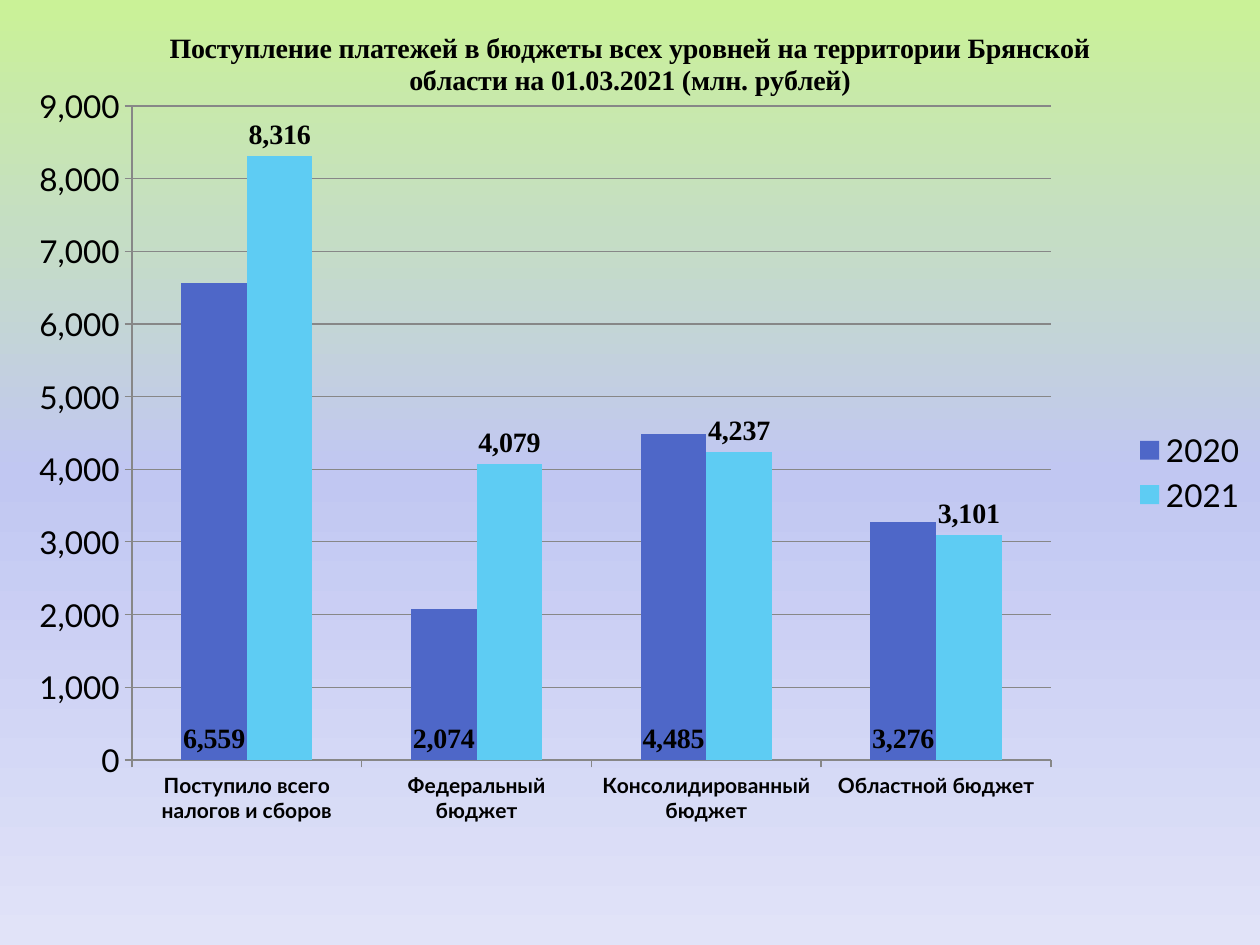
from lxml import etree
from pptx import Presentation
from pptx.chart.data import CategoryChartData
from pptx.dml.color import RGBColor
from pptx.enum import chart as kinds
from pptx.oxml import parse_xml
from pptx.oxml.ns import nsdecls, qn
from pptx.util import Emu, Pt

PX = 914400 // 126
WIDTH, HEIGHT = 1260, 945

THEME = {
    "text": "000000", "rule": "878787",
    "body": "Lato", "accent": "Times New Roman",
    "body_size": 18, "accent_size": 16, "category_size": 12,
    "backdrop": [(0, "CAF297"), (25, "C5DDC5"), (50, "C1C7F2"), (100, "E1E3F8")],
}
NUMBERS = "#,##0"
BUDGETS = ["Поступило всего налогов и сборов", "Федеральный бюджет",
           "Консолидированный бюджет", "Областной бюджет"]
YEARS = [
    ("2020", [6559, 2074, 4485, 3276], "4E67C8", kinds.XL_LABEL_POSITION.INSIDE_BASE),
    ("2021", [8316, 4079, 4237, 3101], "5ECCF3", kinds.XL_LABEL_POSITION.OUTSIDE_END),
]


def style_font(font, face, size, bold):
    for key, value in {"name": face, "size": Pt(size), "bold": bold}.items():
        setattr(font, key, value)
    font.color.rgb = RGBColor.from_string(THEME["text"])


def style_line(line):
    line.color.rgb = RGBColor.from_string(THEME["rule"])
    line.width = Pt(0.75)


deck = Presentation()
deck.slide_width, deck.slide_height = Emu(WIDTH * PX), Emu(HEIGHT * PX)
slide = deck.slides.add_slide(deck.slide_layouts[6])

# Chart over the full slide
receipts = CategoryChartData(number_format=NUMBERS)
receipts.categories = BUDGETS
for year, amounts, _, _ in YEARS:
    receipts.add_series(year, amounts)
chart = slide.shapes.add_chart(
    kinds.XL_CHART_TYPE.COLUMN_CLUSTERED, 0, 0,
    deck.slide_width, deck.slide_height, receipts).chart
style_font(chart.font, THEME["body"], THEME["body_size"], False)

# Title
chart.has_title = True
heading = chart.chart_title.text_frame.paragraphs[0].add_run()
heading.text = ("Поступление платежей в бюджеты всех уровней на территории "
                "Брянской области на 01.03.2021 (млн. рублей)")
style_font(heading.font, THEME["accent"], THEME["accent_size"], True)

# Legend
chart.has_legend = True
chart.legend.position = kinds.XL_LEGEND_POSITION.RIGHT
chart.legend.include_in_layout = False

# Axes
amount_axis, budget_axis = chart.value_axis, chart.category_axis
for key, value in {"minimum_scale": 0, "maximum_scale": 9000, "major_unit": 1000,
                   "has_major_gridlines": True}.items():
    setattr(amount_axis, key, value)
amount_axis.tick_labels.number_format = NUMBERS
amount_axis.tick_labels.number_format_is_linked = False
style_line(amount_axis.major_gridlines.format.line)
for axis in (amount_axis, budget_axis):
    axis.major_tick_mark = kinds.XL_TICK_MARK.OUTSIDE
    style_line(axis.format.line)
style_font(budget_axis.tick_labels.font, THEME["body"], THEME["category_size"], True)

# Columns and their labels
columns = chart.plots[0]
columns.vary_by_categories = False
columns.gap_width, columns.overlap = 150, 0
for series, (_, _, color, position) in zip(columns.series, YEARS):
    series.format.fill.solid()
    series.format.fill.fore_color.rgb = RGBColor.from_string(color)
    labels = series.data_labels
    for key, value in {"show_value": True, "position": position,
                       "number_format": NUMBERS,
                       "number_format_is_linked": False}.items():
        setattr(labels, key, value)
    style_font(labels.font, THEME["accent"], THEME["accent_size"], True)

# Plot area placement, as shares of the chart
plot_area = chart._chartSpace.chart.plotArea
for old_layout in plot_area.findall(qn("c:layout")):
    plot_area.remove(old_layout)
layout = parse_xml(f"<c:layout {nsdecls('c')}><c:manualLayout/></c:layout>")
for tag, value in [("layoutTarget", "inner"), ("xMode", "edge"), ("yMode", "edge"),
                   ("x", 132 / WIDTH), ("y", 106 / HEIGHT),
                   ("w", 919 / WIDTH), ("h", 654 / HEIGHT)]:
    etree.SubElement(layout[0], qn(f"c:{tag}")).set("val", str(value))
plot_area.insert(0, layout)

# Gradient backdrop of the chart
stops = "".join(f'<a:gs pos="{share * 1000}"><a:srgbClr val="{color}"/></a:gs>'
                for share, color in THEME["backdrop"])
chart._chartSpace.chart.addnext(parse_xml(
    f"<c:spPr {nsdecls('c', 'a')}><a:gradFill><a:gsLst>{stops}</a:gsLst>"
    '<a:lin ang="5400000" scaled="0"/></a:gradFill><a:ln><a:noFill/></a:ln></c:spPr>'))

deck.save("out.pptx")
